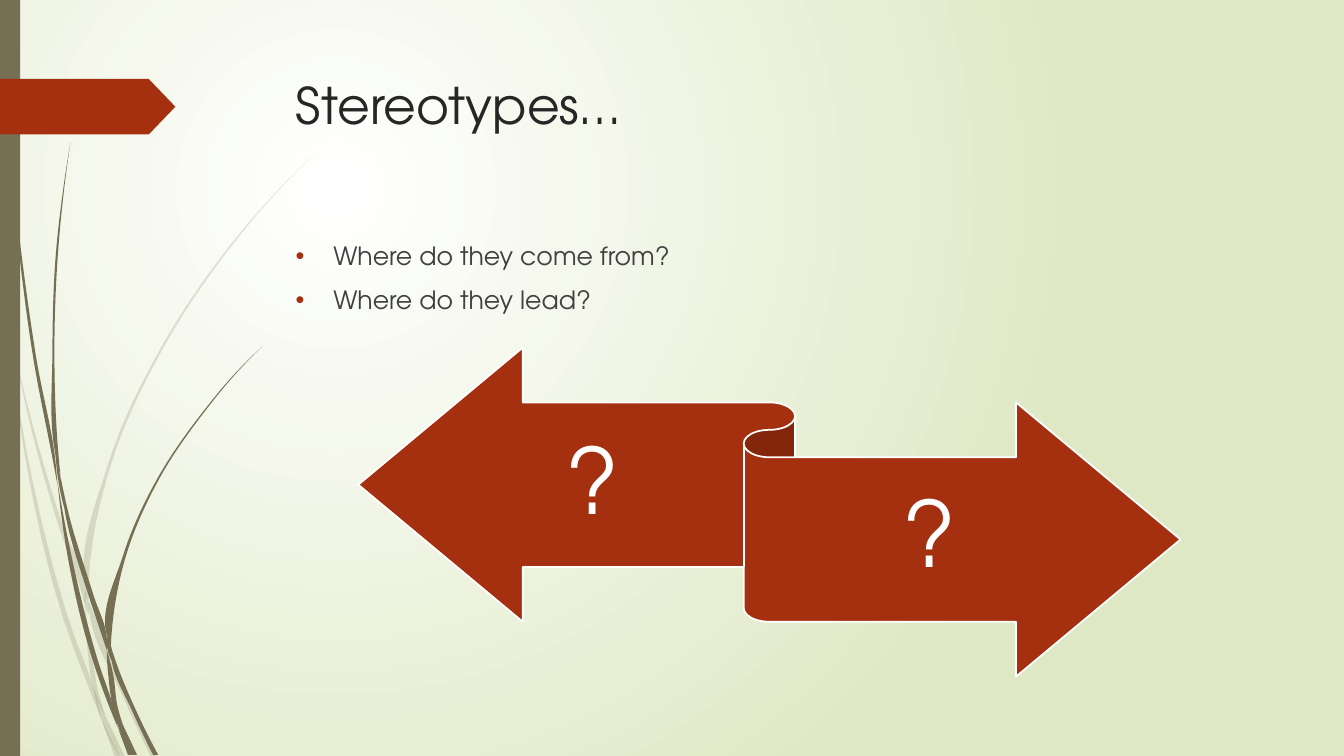
"""Builds the "Stereotypes…" slide with grass blades and a two-way ribbon arrow."""
from math import dist

from lxml import etree
from pptx import Presentation
from pptx.dml.color import RGBColor
from pptx.enum import shapes, text
from pptx.oxml import ns
from pptx.util import Cm, Pt

FONT = "TeX Gyre Adventor"
WHITE = RGBColor(0xFF, 0xFF, 0xFF)
PALE_GREEN = RGBColor(0xDF, 0xE8, 0xC4)
OLIVE = RGBColor(0x76, 0x6F, 0x54)
RUST = RGBColor(0xA5, 0x30, 0x10)
TITLE_INK = RGBColor(0x26, 0x26, 0x26)
BODY_INK = RGBColor(0x40, 0x40, 0x40)

TITLE = "Stereotypes…"
QUESTIONS = ["Where do they come from?", "Where do they lead?"]
RIBBON_LABELS = [
    ("?", (11.51, 10.21, 6.83, 4.06)),
    ("?", (19.38, 11.55, 8.08, 4.06)),
]

GRASS_UNIT = Cm(2.54) / 100
FAINT_BLADES = [
    [(0, 282, 0), (6, 318, 3), (11, 350, 0)],
    [(14, 345, 0), (38.5, 449, 3), (60, 521, 4), (83.5, 590, 4), (84, 599, 0)],
    [(88, 596, 0), (91, 608.5, 4), (125, 693, 4), (152.5, 751, 5)],
    [(105, 711, 0), (121.5, 751, 5)],
    [(11, 350, 0), (29.5, 470, 3), (67.5, 620, 5), (92.5, 688, 4), (101, 714, 0)],
    [(84, 599, 0), (89, 646, 4), (95.5, 686, 4), (105, 711, 0)],
    [(312, 153, 0), (268, 197.5, 1), (228.5, 244.5, 2), (159, 348.5, 2.5), (108.5, 461.5, 3),
     (86.5, 584, 3), (88, 596, 0)],
    [(101, 714, 0), (116.5, 751, 5)],
    [(85, 586, 0), (86, 598, 4), (88, 610, 0)],
    [(93, 683, 0), (101.5, 709, 5), (119, 751, 0)],
]
SOLID_BLADES = [
    [(3.5, 0, 1), (6.5, 109.5, 1), (18, 232.5, 2), (34.5, 355, 3), (54.5, 462, 2), (57, 481, 0)],
    [(60, 472, 0), (65.5, 505, 3), (90.5, 591, 5), (104, 633, 4), (106, 645, 0)],
    [(110, 641, 0), (112, 652, 3), (134, 707, 4), (154.5, 749, 5)],
    [(57, 477, 0), (70, 556.5, 4), (95.5, 658, 5), (110, 700, 4), (117, 722, 0)],
    [(70, 141, 0), (62.5, 193, 1), (57, 245, 2), (53, 349, 2), (56.5, 451, 3), (60, 472, 0)],
    [(122, 719, 0), (134.5, 749, 3)],
    [(55, 449, 0), (59, 476, 2.5), (64, 505, 0)],
    [(260, 344, 0), (231, 373.5, 1), (204.5, 405.5, 1.5), (157, 475, 2), (123.5, 551.5, 3),
     (108.5, 632, 4), (110, 641, 0)],
    [(117, 722, 0), (129, 749, 4)],
    [(106, 645, 0), (110, 670, 5), (114.5, 700, 4), (122, 719, 0)],
    [(106, 631, 0), (108.5, 643, 4), (111, 656, 0)],
    [(110, 691, 0), (118.5, 717, 5), (132, 749, 3)],
]


def bend(points):
    """Return the two Bézier control points of each span of a smooth curve."""
    gaps = [dist(a, b) for a, b in zip(points, points[1:])]
    slopes = [[(q - p) / gap for p, q in zip(a, b)]
              for a, b, gap in zip(points, points[1:], gaps)]
    inner = [[(p * after + q * before) / (before + after) for p, q in zip(a, b)]
             for a, b, before, after in zip(slopes, slopes[1:], gaps, gaps[1:])]
    if inner:
        first = [2 * p - q for p, q in zip(slopes[0], inner[0])]
        last = [2 * p - q for p, q in zip(slopes[-1], inner[-1])]
    else:
        first = last = slopes[0]
    tangents = [first, *inner, last]
    return [([p + m * gap / 3 for p, m in zip(a, leave)],
             [q - m * gap / 3 for q, m in zip(b, arrive)])
            for a, b, gap, leave, arrive
            in zip(points, points[1:], gaps, tangents, tangents[1:])]


def paint(shape, color, alpha=None):
    """Fill a shape flatly, without outline or shadow."""
    shape.shadow.inherit = False
    shape.fill.solid()
    shape.fill.fore_color.rgb = color
    shape.line.fill.background()
    if alpha:
        tint = shape._element.spPr.find(".//" + ns.qn("a:srgbClr"))
        etree.SubElement(tint, ns.qn("a:alpha"), val=str(alpha * 1000))


def add_blade(page, spine, alpha=None):
    """Draw one tapering blade around its spine of x, y and width."""
    left_edge, right_edge = ([((x + side * width / 2) * GRASS_UNIT, y * GRASS_UNIT)
                              for x, y, width in spine] for side in (-1, 1))
    right_edge.reverse()
    builder = page.shapes.build_freeform(*left_edge[0])
    builder.add_line_segments(left_edge[1:] + right_edge, close=True)
    blade = builder.convert_to_shape()
    controls = bend(left_edge) + [None] + bend(right_edge)
    lines = blade._element.findall(".//" + ns.qn("a:lnTo"))
    for line, pair in zip(lines, controls):
        if pair:
            line.tag = ns.qn("a:cubicBezTo")
            for index, (x, y) in enumerate(pair):
                point = etree.Element(ns.qn("a:pt"), x=str(round(x - blade.left)),
                                      y=str(round(y - blade.top)))
                line.insert(index, point)
    paint(blade, OLIVE, alpha)


def add_preset(page, kind, place, color):
    """Add a flat preset shape at a place given in centimetres."""
    shape = page.shapes.add_shape(kind, *map(Cm, place))
    paint(shape, color)
    return shape


def set_font(para, size, color):
    """Set font, size and colour of a paragraph."""
    para.font.name = FONT
    para.font.size = Pt(size)
    para.font.color.rgb = color


def add_background(page):
    """Fill the page with a round gradient centred at its upper left."""
    fill = page.background.fill
    fill.gradient()
    for stop, color in zip(fill.gradient_stops, (WHITE, PALE_GREEN)):
        stop.color.rgb = color
    gradient = page._element.find(".//" + ns.qn("a:gradFill"))
    gradient.remove(gradient.find(ns.qn("a:lin")))
    circle = etree.SubElement(gradient, ns.qn("a:path"), path="circle")
    etree.SubElement(circle, ns.qn("a:fillToRect"), l="50000", t="50000", r="100000", b="100000")


def add_title(page):
    """Move, fill and format the title placeholder."""
    title = page.shapes.title
    title.left, title.top, title.width, title.height = map(Cm, (7.2, 1.73, 24.77, 3.56))
    title.text_frame.text = TITLE
    title.text_frame.vertical_anchor = text.MSO_ANCHOR.TOP
    para = title.text_frame.paragraphs[0]
    para.alignment = text.PP_ALIGN.LEFT
    set_font(para, 36, TITLE_INK)


def add_questions(page):
    """Add the bulleted questions."""
    frame = page.shapes.add_textbox(*map(Cm, (7.2, 5.93, 11.99, 10.49))).text_frame
    frame.word_wrap = True
    for index, question in enumerate(QUESTIONS):
        para = frame.add_paragraph() if index else frame.paragraphs[0]
        para.text = question
        if index:
            para.space_before = Pt(10)
        props = para._p.get_or_add_pPr()
        props.set("marL", str(Cm(0.95)))
        props.set("indent", str(-Cm(0.95)))
        bullet_color = etree.SubElement(props, ns.qn("a:buClr"))
        etree.SubElement(bullet_color, ns.qn("a:srgbClr"), val=str(RUST))
        etree.SubElement(props, ns.qn("a:buFont"), typeface="Arial")
        etree.SubElement(props, ns.qn("a:buChar"), char="•")
        set_font(para, 18, BODY_INK)


def add_ribbon(page):
    """Add the two-way ribbon and its labels."""
    ribbon = add_preset(page, shapes.MSO_SHAPE.LEFT_RIGHT_RIBBON, (9.03, 8.76, 20.72, 8.29), RUST)
    ribbon.line.color.rgb = WHITE
    ribbon.line.width = Pt(1.25)
    for label, place in RIBBON_LABELS:
        frame = page.shapes.add_textbox(*map(Cm, place)).text_frame
        frame.word_wrap = True
        frame.vertical_anchor = text.MSO_ANCHOR.MIDDLE
        frame.margin_left = frame.margin_right = 0
        frame.margin_top, frame.margin_bottom = Cm(0.64), Cm(0.69)
        para = frame.paragraphs[0]
        para.text = label
        para.alignment = text.PP_ALIGN.CENTER
        para.line_spacing = 0.9
        set_font(para, 65, WHITE)


def main():
    """Build and save the deck."""
    deck = Presentation()
    deck.slide_width, deck.slide_height = Cm(33.87), Cm(19.05)
    page = deck.slides.add_slide(deck.slide_layouts[5])
    add_background(page)
    for blades, alpha in ((FAINT_BLADES, 20), (SOLID_BLADES, None)):
        for spine in blades:
            add_blade(page, spine, alpha)
    add_preset(page, shapes.MSO_SHAPE.RECTANGLE, (0, 0, 0.51, 19.05), OLIVE)
    tag = add_preset(page, shapes.MSO_SHAPE.PENTAGON, (0, 1.99, 4.42, 1.4), RUST)
    tag.adjustments[0] = 0.48
    add_title(page)
    add_questions(page)
    add_ribbon(page)
    deck.save("out.pptx")


if __name__ == "__main__":
    main()
